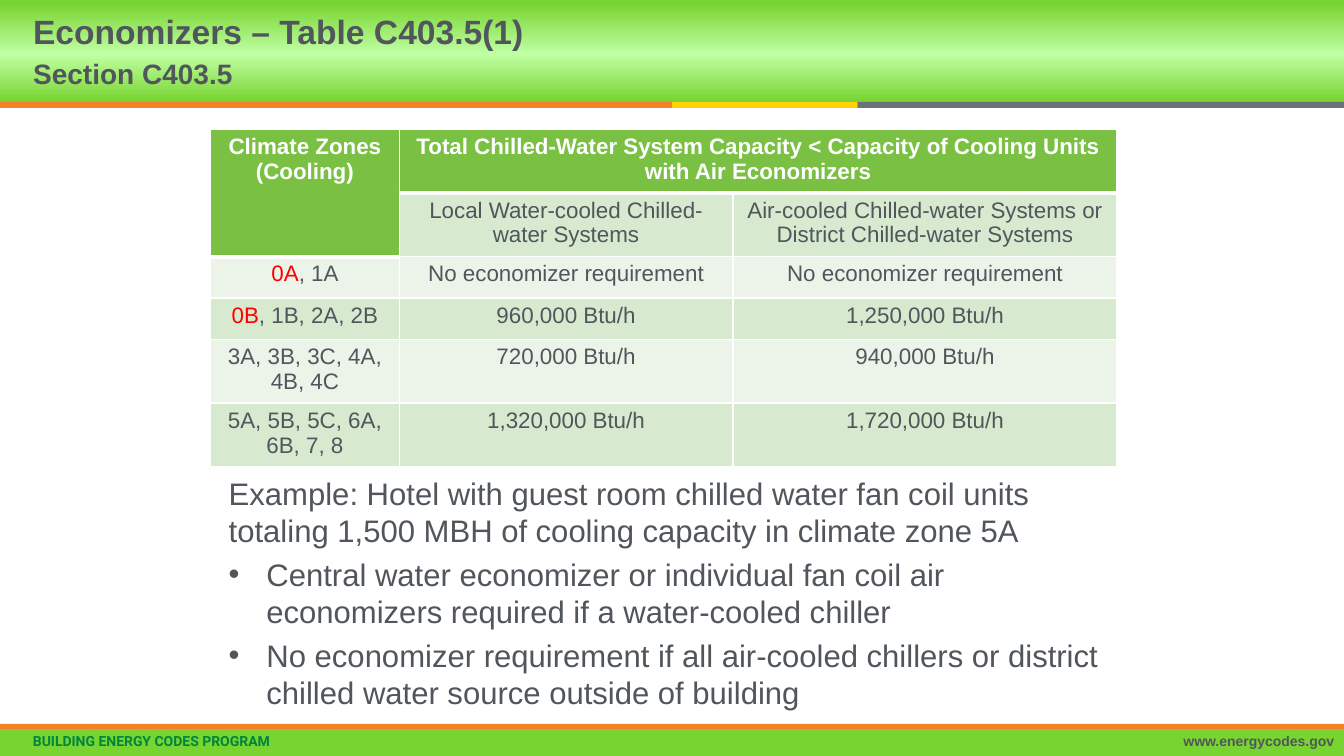
from copy import deepcopy

from lxml.etree import SubElement
from pptx import Presentation
from pptx.dml.color import RGBColor
from pptx.enum.shapes import MSO_SHAPE
from pptx.enum.text import MSO_ANCHOR, MSO_AUTO_SIZE, PP_ALIGN
from pptx.oxml.ns import qn
from pptx.util import Cm, Pt

WHITE = RGBColor(0xFF, 0xFF, 0xFF)
SLATE = RGBColor(0x50, 0x56, 0x5C)
RED = RGBColor(0xFF, 0x00, 0x00)
LIME = RGBColor(0x78, 0xD4, 0x30)
PALE_LIME = RGBColor(0xC0, 0xFF, 0xA4)
ORANGE = RGBColor(0xF5, 0x80, 0x25)
YELLOW = RGBColor(0xFF, 0xD2, 0x00)
GRAY = RGBColor(0x6A, 0x73, 0x7B)
PROGRAM_GREEN = RGBColor(0x00, 0x85, 0x3F)
HEADER_GREEN = RGBColor(0x7A, 0xC1, 0x43)
BAND_DARK = RGBColor(0xD7, 0xE9, 0xCF)
BAND_LIGHT = RGBColor(0xEC, 0xF4, 0xE9)

SLIDE_WIDTH = 33.87
HEADER_HEIGHT = 2.57

COLUMN_WIDTHS = (4.75, 8.41, 9.68)
ROW_HEIGHTS = (1.5, 1.5, 1.04, 1.04, 1.5, 1.5)
SUBHEADINGS = ("Local Water-cooled Chilled-water Systems",
               "Air-cooled Chilled-water Systems or District Chilled-water Systems")
# New zone (red), other zones, local water-cooled, air-cooled or district
CAPACITIES = (
    ("0A", ", 1A", "No economizer requirement", "No economizer requirement"),
    ("0B", ", 1B, 2A, 2B", "960,000 Btu/h", "1,250,000 Btu/h"),
    ("", "3A, 3B, 3C, 4A, 4B, 4C", "720,000 Btu/h", "940,000 Btu/h"),
    ("", "5A, 5B, 5C, 6A, 6B, 7, 8", "1,320,000 Btu/h", "1,720,000 Btu/h"),
)
EXAMPLE = ("Example: Hotel with guest room chilled water fan coil units "
           "totaling 1,500 MBH of cooling capacity in climate zone 5A")
REQUIREMENTS = (
    "Central water economizer or individual fan coil air economizers "
    "required if a water-cooled chiller",
    "No economizer requirement if all air-cooled chillers or district "
    "chilled water source outside of building",
)


def add_text(paragraph, text, size=16, color=SLATE, bold=False, font="Arial"):
    run = paragraph.add_run()
    run.text = text
    run.font.size = Pt(size)
    run.font.name = font
    run.font.bold = bold
    run.font.color.rgb = color


def add_band(slide, left, top, width, height, color):
    band = slide.shapes.add_shape(MSO_SHAPE.RECTANGLE, Cm(left), Cm(top), Cm(width), Cm(height))
    band.shadow.inherit = False
    band.line.fill.background()
    band.fill.solid()
    band.fill.fore_color.rgb = color
    return band


def apply_header_gradient(band):
    band.fill.gradient()
    band.fill.gradient_angle = 90
    first = band.fill.gradient_stops[0]._gs
    first.addnext(deepcopy(first))
    stops = ((0, LIME), (0.47, PALE_LIME), (0.97, LIME))
    for stop, (position, color) in zip(band.fill.gradient_stops, stops):
        stop.position = position
        stop.color.rgb = color


def add_footer_text(slide, left, width, text, alignment, **text_format):
    box = slide.shapes.add_textbox(Cm(left), Cm(18.39), Cm(width), Cm(0.66))
    box.text_frame.word_wrap = True
    paragraph = box.text_frame.paragraphs[0]
    paragraph.alignment = alignment
    paragraph.line_spacing = 0.9
    add_text(paragraph, text, size=10, bold=True, **text_format)


def place_placeholder(slide, placeholder, left, top, width, height, anchor):
    placeholder.left, placeholder.top = Cm(left), Cm(top)
    placeholder.width, placeholder.height = Cm(width), Cm(height)
    frame = placeholder.text_frame
    frame.word_wrap = True
    frame.auto_size = MSO_AUTO_SIZE.NONE
    frame.vertical_anchor = anchor
    # Bring the placeholder in front of the bands
    slide.shapes._spTree.append(placeholder._element)
    return frame


def set_bullet(paragraph, bulleted):
    properties = paragraph._p.get_or_add_pPr()
    indent = Cm(0.95) if bulleted else 0
    properties.set("marL", str(indent))
    properties.set("indent", str(-indent))
    if bulleted:
        SubElement(properties, qn("a:buFont"), typeface="Arial")
        SubElement(properties, qn("a:buChar"), char="•")
    else:
        SubElement(properties, qn("a:buNone"))


def format_cell(cell, color, bottom_width=1):
    properties = cell._tc.get_or_add_tcPr()
    for side, width in (("L", 1), ("R", 1), ("T", 1), ("B", bottom_width)):
        line = SubElement(properties, qn(f"a:ln{side}"), w=str(Pt(width)))
        fill = SubElement(line, qn("a:solidFill"))
        SubElement(fill, qn("a:srgbClr"), val=str(WHITE))
    cell.fill.solid()
    cell.fill.fore_color.rgb = color


def add_cell_line(cell, text, new_paragraph=False, **text_format):
    frame = cell.text_frame
    paragraph = frame.add_paragraph() if new_paragraph else frame.paragraphs[0]
    paragraph.alignment = PP_ALIGN.CENTER
    add_text(paragraph, text, **text_format)


def add_capacity_table(slide):
    frame = slide.shapes.add_table(len(ROW_HEIGHTS), len(COLUMN_WIDTHS), Cm(5.31), Cm(3.25),
                                   Cm(sum(COLUMN_WIDTHS)), Cm(sum(ROW_HEIGHTS)))
    table = frame.table
    table.first_row = table.horz_banding = False
    for column, width in zip(table.columns, COLUMN_WIDTHS):
        column.width = Cm(width)
    for row, height in zip(table.rows, ROW_HEIGHTS):
        row.height = Cm(height)

    # Fills and borders
    for row in range(len(ROW_HEIGHTS)):
        for column in range(len(COLUMN_WIDTHS)):
            if row == 0 or (row, column) == (1, 0):
                format_cell(table.cell(row, column), HEADER_GREEN, bottom_width=3)
            else:
                format_cell(table.cell(row, column), BAND_DARK if row % 2 else BAND_LIGHT)
    table.cell(0, 0).merge(table.cell(1, 0))
    table.cell(0, 1).merge(table.cell(0, 2))

    # Headings
    heading = {"color": WHITE, "bold": True}
    add_cell_line(table.cell(0, 0), "Climate Zones", **heading)
    add_cell_line(table.cell(0, 0), "(Cooling)", new_paragraph=True, **heading)
    add_cell_line(table.cell(0, 1), "Total Chilled-Water System Capacity < Capacity of "
                  "Cooling Units with Air Economizers", **heading)
    for column, text in enumerate(SUBHEADINGS, start=1):
        add_cell_line(table.cell(1, column), text)

    # Capacities by climate zone
    for row, (new_zone, zones, local, district) in enumerate(CAPACITIES, start=2):
        if new_zone:
            add_cell_line(table.cell(row, 0), new_zone, color=RED)
        for column, text in enumerate((zones, local, district)):
            add_cell_line(table.cell(row, column), text)


def fill_title(slide):
    frame = place_placeholder(slide, slide.shapes.title, 0.58, 0, 21.06, HEADER_HEIGHT,
                              MSO_ANCHOR.MIDDLE)
    paragraph = frame.paragraphs[0]
    paragraph.alignment = PP_ALIGN.LEFT
    paragraph.line_spacing = Pt(28)
    add_text(paragraph, "Economizers – Table C403.5(1)", size=24, bold=True)
    paragraph.add_line_break()
    add_text(paragraph, "Section C403.5", size=20, bold=True)


def fill_body(slide):
    frame = place_placeholder(slide, slide.placeholders[1], 5.51, 11.84, 22.86, 5.94,
                              MSO_ANCHOR.TOP)
    for index, text in enumerate((EXAMPLE, *REQUIREMENTS)):
        paragraph = frame.add_paragraph() if index else frame.paragraphs[0]
        set_bullet(paragraph, bulleted=index > 0)
        paragraph.line_spacing = Pt(26.4)
        paragraph.space_before = Pt(5 if index else 0)
        add_text(paragraph, text, size=22.2)


def main():
    presentation = Presentation()
    presentation.slide_width, presentation.slide_height = Cm(SLIDE_WIDTH), Cm(19.05)
    slide = presentation.slides.add_slide(presentation.slide_layouts[1])

    # Header and footer bands
    apply_header_gradient(add_band(slide, -0.1, 0, SLIDE_WIDTH + 0.1, HEADER_HEIGHT, LIME))
    add_band(slide, 0, 18.36, SLIDE_WIDTH, 0.69, LIME)
    left = 0
    for width, color in ((16.94, ORANGE), (4.67, YELLOW), (12.26, GRAY)):
        add_band(slide, left, HEADER_HEIGHT, width, 0.15, color)
        left += width
    add_band(slide, 0, 18.24, SLIDE_WIDTH, 0.13, ORANGE)

    # Footer text
    add_footer_text(slide, 0.58, 26.62, "BUILDING ENERGY CODES PROGRAM", PP_ALIGN.LEFT,
                    color=PROGRAM_GREEN, font="Roboto")
    add_footer_text(slide, 20.28, 13.59, "www.energycodes.gov", PP_ALIGN.RIGHT)

    # Content
    add_capacity_table(slide)
    fill_title(slide)
    fill_body(slide)
    presentation.save("out.pptx")


if __name__ == "__main__":
    main()
